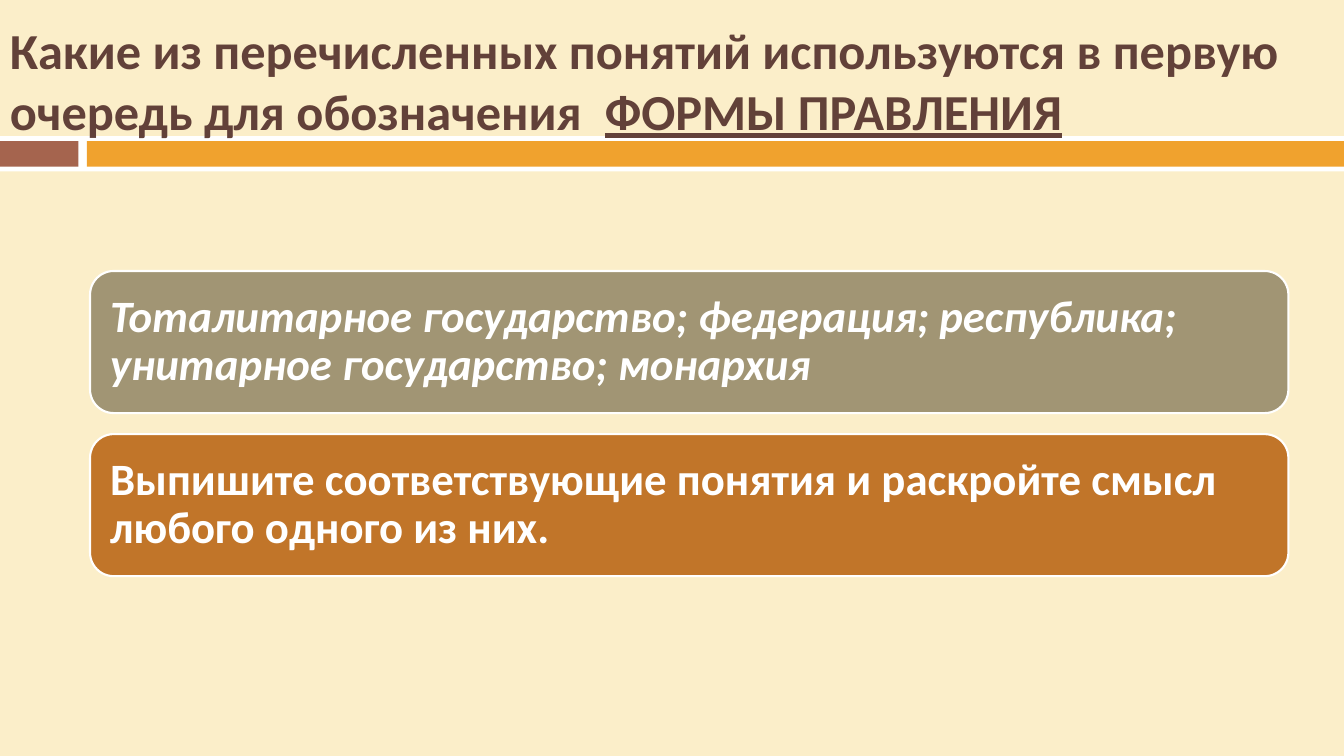
from dataclasses import dataclass
from pptx import Presentation
from pptx.dml.color import RGBColor
from pptx.enum.shapes import MSO_SHAPE
from pptx.enum.text import MSO_ANCHOR, PP_ALIGN
from pptx.util import Cm, Pt


@dataclass(frozen=True)
class Theme:
    font: str = "Calibri"
    back: str = "FBEEC9"
    white: str = "FFFFFF"
    brick: str = "A5644E"
    gold: str = "F0A22E"
    brown: str = "624139"
    olive: str = "A19574"
    rust: str = "C17529"
    head: int = 36
    body: int = 32
    edge: float = 1.5


def write(frame, text, *, font, size, color, bold=True, italic=None,
          under=None, space=None):
    para = frame.paragraphs[0]
    para.alignment = PP_ALIGN.LEFT
    if space:
        para.line_spacing = space
    run = para.add_run()
    run.text = text
    face = run.font
    face.name = font
    face.size = Pt(size)
    face.bold = bold
    face.italic = italic
    face.underline = under
    face.color.rgb = RGBColor.from_string(color)


class Deck:
    def __init__(self, slide, theme):
        self.slide = slide
        self.theme = theme
        fill = slide.background.fill
        fill.solid()
        fill.fore_color.rgb = RGBColor.from_string(theme.back)

    def block(self, kind, left, top, width, height, color):
        shape = self.slide.shapes.add_shape(
            kind, Cm(left), Cm(top), Cm(width), Cm(height))
        shape.shadow.inherit = False
        shape.fill.solid()
        shape.fill.fore_color.rgb = RGBColor.from_string(color)
        shape.line.fill.background()
        return shape

    def strip(self, *place):
        self.block(MSO_SHAPE.RECTANGLE, *place)

    def title(self, left, top, width, height, plain, key):
        box = self.slide.shapes.add_textbox(
            Cm(left), Cm(top), Cm(width), Cm(height))
        frame = box.text_frame
        frame.word_wrap = True
        frame.vertical_anchor = MSO_ANCHOR.MIDDLE
        style = dict(font=self.theme.font, size=self.theme.head,
                     color=self.theme.brown)
        write(frame, plain, **style)
        write(frame, key, under=True, **style)

    def card(self, left, top, width, height, color, text, italic):
        theme = self.theme
        shape = self.block(MSO_SHAPE.ROUNDED_RECTANGLE,
                           left, top, width, height, color)
        shape.line.color.rgb = RGBColor.from_string(theme.white)
        shape.line.width = Pt(theme.edge)
        frame = shape.text_frame
        frame.word_wrap = True
        frame.vertical_anchor = MSO_ANCHOR.MIDDLE
        frame.margin_left = frame.margin_right = Cm(0.33)
        frame.margin_top = frame.margin_bottom = Cm(0.33)
        write(frame, text, font=theme.font, size=theme.body,
              color=theme.white, italic=italic, space=0.9)


def main():
    show = Presentation()
    show.slide_width, show.slide_height = Cm(33.87), Cm(19.05)
    theme = Theme()
    deck = Deck(show.slides.add_slide(show.slide_layouts[6]), theme)

    deck.strip(0, 3.43, 33.87, 0.89, theme.white)
    deck.strip(0, 3.56, 1.98, 0.64, theme.brick)
    deck.strip(2.19, 3.56, 31.68, 0.64, theme.gold)
    deck.title(0, 0.64, 34.54, 2.74,
               "Какие из перечисленных понятий используются в первую "
               "очередь для обозначения  ", "ФОРМЫ ПРАВЛЕНИЯ")

    cards = [
        (theme.olive, "Тоталитарное государство; федерация; республика; "
         "унитарное государство; монархия", True),
        (theme.rust, "Выпишите соответствующие понятия и раскройте смысл "
         "любого одного из них.", None),
    ]
    for row, card in enumerate(cards):
        deck.card(2.27, 6.83 + row * 4.11, 30.2, 3.58, *card)

    show.save("out.pptx")


if __name__ == "__main__":
    main()
